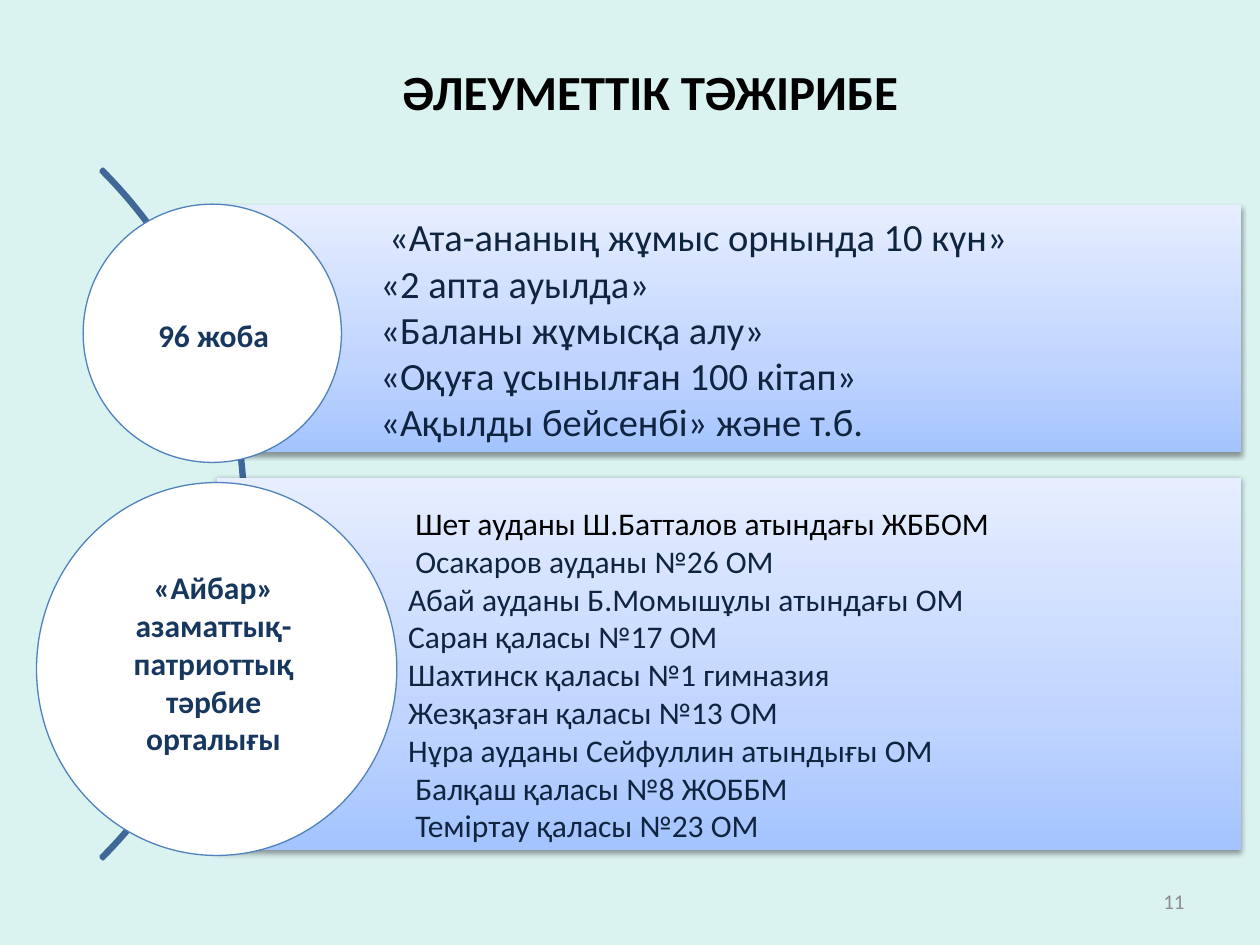
from lxml import etree
from pptx import Presentation
from pptx.dml.color import RGBColor
from pptx.enum.shapes import MSO_SHAPE as Shape
from pptx.enum.text import MSO_ANCHOR as Anchor, PP_ALIGN as Align
from pptx.oxml import parse_xml
from pptx.oxml.ns import nsdecls, qn
from pptx.util import Inches, Pt

FONT = "Calibri"
NAVY, DARK_BLUE, BLACK = "0F243E", "17375E", "000000"
PANEL_STOPS = [(0, "A4C4FF"), (35, "BFD4FF"), (100, "E6EEFF")]

PROJECTS = [
    " «Ата-ананың жұмыс орнында 10 күн»",
    "«2 апта ауылда»",
    "«Баланы жұмысқа алу»",
    "«Оқуға ұсынылған 100 кітап»",
    "«Ақылды бейсенбі» және т.б.",
]
CENTRES = [
    " Шет ауданы Ш.Батталов атындағы ЖББОМ",
    " Осакаров ауданы №26 ОМ",
    "Абай ауданы Б.Момышұлы атындағы ОМ",
    "Саран қаласы №17 ОМ",
    "Шахтинск қаласы №1 гимназия",
    "Жезқазған қаласы №13 ОМ",
    "Нұра ауданы Сейфуллин атындығы ОМ",
    " Балқаш қаласы №8 ЖОББМ",
    " Теміртау қаласы №23 ОМ",
]


def color(value):
    return RGBColor.from_string(value)


def inches(box):
    return [Inches(length) for length in box]


def write(frame, lines, size, tint, align=Align.LEFT, bold=False):
    frame.word_wrap = True
    frame.text = "\n".join(lines)
    for para in frame.paragraphs:
        para.alignment = align
        for span in para.runs:
            span.font.name = FONT
            span.font.size = Pt(size)
            span.font.bold = bold
            span.font.color.rgb = color(tint)


def add_figure(page, kind, box):
    figure = page.shapes.add_shape(kind, *inches(box))
    figure.shadow.inherit = False
    return figure


def add_label(page, box, text, size, tint, align, bold=False):
    label = page.shapes.add_textbox(*inches(box))
    write(label.text_frame, [text], size, tint, align, bold)
    return label


def add_title(page, box, text):
    title = page.shapes.title
    title.left, title.top, title.width, title.height = inches(box)
    title.text_frame.vertical_anchor = Anchor.MIDDLE
    write(title.text_frame, [text], 28, BLACK, Align.CENTER, bold=True)


def add_arc(page, box):
    arc = add_figure(page, Shape.BLOCK_ARC, box)
    # Angles of 315 and 45 degrees, then the thickness of the band
    for index, value in enumerate((189, 27, 0.003)):
        arc.adjustments[index] = value
    arc.fill.background()
    arc.line.color.rgb = color("3F6797")
    arc.line.width = Pt(2)


def add_panel(page, box, lines, size, left_inset, anchor):
    panel = add_figure(page, Shape.RECTANGLE, box)
    panel.line.fill.background()

    # Three-stop gradient, dark at the bottom
    panel.fill.gradient()
    panel.fill.gradient_angle = 90
    stops = panel._element.spPr.find(qn("a:gradFill")).find(qn("a:gsLst"))
    for stop in list(stops):
        stops.remove(stop)
    for position, tint in PANEL_STOPS:
        stops.append(parse_xml(
            f'<a:gs {nsdecls("a")} pos="{position * 1000}"><a:srgbClr val="{tint}"/></a:gs>'))

    # Soft shadow below
    effects = panel._element.spPr.find(qn("a:effectLst"))
    shadow = etree.SubElement(effects, qn("a:outerShdw"), blurRad=str(Pt(3.1)),
                              dist=str(Pt(1.6)), dir="5400000", rotWithShape="0")
    tint = etree.SubElement(shadow, qn("a:srgbClr"), val=BLACK)
    etree.SubElement(tint, qn("a:alpha"), val="38000")

    frame = panel.text_frame
    frame.margin_left = Inches(left_inset)
    frame.margin_top = frame.margin_right = frame.margin_bottom = Inches(0.05)
    frame.vertical_anchor = anchor
    write(frame, lines, size, NAVY)
    return panel


def add_circle(page, box):
    circle = add_figure(page, Shape.OVAL, box)
    circle.fill.solid()
    circle.fill.fore_color.rgb = color("FFFFFF")
    circle.line.color.rgb = color("4F81BD")
    circle.line.width = Pt(0.75)


def main():
    deck = Presentation()
    deck.slide_width, deck.slide_height = Inches(10), Inches(7.5)
    page = deck.slides.add_slide(deck.slide_layouts[5])
    page.background.fill.solid()
    page.background.fill.fore_color.rgb = color("DAF2F0")

    add_title(page, (0.43, 0.21, 9.37, 1.02), " ӘЛЕУМЕТТІК ТӘЖІРИБЕ")
    add_arc(page, (-5.79, 0.21, 7.74, 7.74))

    # Projects
    add_panel(page, (1.72, 1.63, 8.13, 1.96), PROJECTS, 22, 1.3, Anchor.MIDDLE)
    add_circle(page, (0.66, 1.62, 2.05, 2.05))

    # Education centres, the first one in black
    centres = add_panel(page, (1.72, 3.79, 8.13, 2.96), CENTRES, 18, 1.52, Anchor.BOTTOM)
    centres.text_frame.paragraphs[0].runs[0].font.color.rgb = color(BLACK)
    add_circle(page, (0.29, 3.83, 2.86, 2.96))

    # Slide number and circle captions
    number = add_label(page, (7.17, 6.95, 2.33, 0.4), "11", 12, "8C8C8C", Align.RIGHT)
    number.text_frame.vertical_anchor = Anchor.MIDDLE
    add_label(page, (0.83, 2.46, 1.73, 0.4), "96 жоба", 18, DARK_BLUE, Align.CENTER, True)
    add_label(page, (0.67, 4.46, 2.05, 1.62),
              "«Айбар» азаматтық-патриоттық тәрбие орталығы",
              18, DARK_BLUE, Align.CENTER, True)

    deck.save("out.pptx")


if __name__ == "__main__":
    main()
